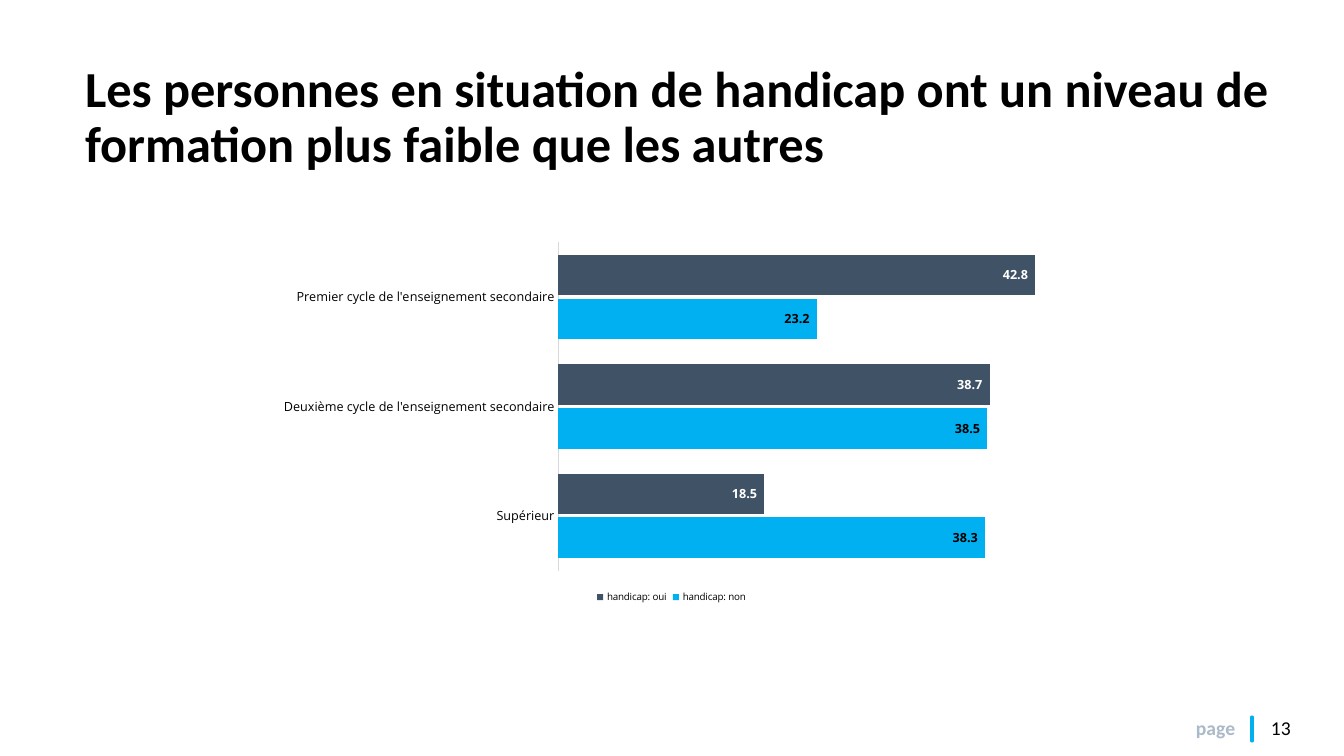
from dataclasses import dataclass

from lxml import etree
from pptx import Presentation
from pptx.chart.data import CategoryChartData
from pptx.dml.color import RGBColor
from pptx.enum.chart import XL_CHART_TYPE, XL_LABEL_POSITION, XL_LEGEND_POSITION, XL_TICK_MARK
from pptx.enum.shapes import MSO_CONNECTOR
from pptx.enum.text import MSO_ANCHOR, MSO_AUTO_SIZE, PP_ALIGN
from pptx.oxml import parse_xml
from pptx.oxml.ns import nsdecls, qn
from pptx.util import Emu, Pt

BARS = XL_CHART_TYPE.BAR_CLUSTERED
IN_END = XL_LABEL_POSITION.INSIDE_END
BOTTOM = XL_LEGEND_POSITION.BOTTOM
NO_TICK = XL_TICK_MARK.NONE
STRAIGHT = MSO_CONNECTOR.STRAIGHT
MIDDLE = MSO_ANCHOR.MIDDLE
TOP = MSO_ANCHOR.TOP
NO_FIT = MSO_AUTO_SIZE.NONE
LEFT = PP_ALIGN.LEFT

SCALE = 914400 / 100.8


@dataclass(frozen=True)
class Theme:
    face: str = "Calibri"
    chart_face: str = "Open Sans"
    black: str = "000000"
    white: str = "FFFFFF"
    blue: str = "00B0F0"
    slate: str = "405265"
    mist: str = "ABBAC9"
    grey: str = "D9D9D9"
    title: int = 36
    foot: int = 14
    label: int = 9
    legend: int = 7


THEME = Theme()
FORMAT = '_-* #,##0.0_-;\\-* #,##0.0_-;_-* "-"??_-;'
LEVELS = [
    "Supérieur",
    "Deuxième cycle de l'enseignement secondaire",
    "Premier cycle de l'enseignement secondaire",
]
SERIES = [
    ("handicap: non", (38.3, 38.5, 23.2), THEME.blue, THEME.black),
    ("handicap: oui", (18.5, 38.7, 42.8), THEME.slate, THEME.white),
]
PLOT = {"x": 0.36, "y": 0.02, "w": 0.62, "h": 0.88}


def px(count):
    return Emu(round(count * SCALE))


def box(*sides):
    return [px(side) for side in sides]


def style(font, size, color, bold=False, face=THEME.face):
    font.name = face
    font.size = Pt(size)
    font.bold = bold
    font.color.rgb = RGBColor.from_string(color)


def set_frame(frame, anchor):
    frame.margin_left = frame.margin_right = 0
    frame.margin_top = frame.margin_bottom = 0
    frame.word_wrap = True
    frame.auto_size = NO_FIT
    frame.vertical_anchor = anchor


def set_title(slide, text, sides):
    title = slide.shapes.title
    title.left, title.top, title.width, title.height = box(*sides)
    set_frame(title.text_frame, MIDDLE)
    title.text_frame.text = text
    line = title.text_frame.paragraphs[0]
    line.alignment = LEFT
    line.line_spacing = 0.9
    style(line.font, THEME.title, THEME.black, True)


def add_page(slide, word, number, sides, stop):
    frame = slide.shapes.add_textbox(*box(*sides)).text_frame
    set_frame(frame, TOP)
    line = frame.paragraphs[0]
    line.font.name = THEME.face
    line.font.size = Pt(THEME.foot)
    tabs = parse_xml(f'<a:tabLst {nsdecls("a")}><a:tab pos="{px(stop)}" algn="l"/></a:tabLst>')
    line.font  
    line._p.get_or_add_pPr().insert(0, tabs)
    for text, color, bold in ((word + "\t", THEME.mist, True), (number, THEME.black, False)):
        run = line.add_run()
        run.text = text
        run.font.bold = bold
        run.font.color.rgb = RGBColor.from_string(color)


def add_rule(slide, ends, color, width):
    rule = slide.shapes.add_connector(STRAIGHT, *box(*ends))
    rule.line.color.rgb = RGBColor.from_string(color)
    rule.line.width = Pt(width)
    rule.line._get_or_add_ln().set("cap", "rnd")
    etree.SubElement(rule._element.spPr, qn("a:effectLst"))


def set_plot(chart, plot):
    area = chart._chartSpace.chart.plotArea
    for old in area.findall(qn("c:layout")):
        area.remove(old)
    modes = '<c:xMode val="edge"/><c:yMode val="edge"/>'
    sizes = "".join(f'<c:{key} val="{part}"/>' for key, part in plot.items())
    area.insert(0, parse_xml(
        f'<c:layout {nsdecls("c")}><c:manualLayout><c:layoutTarget val="inner"/>'
        f"{modes}{sizes}</c:manualLayout></c:layout>"
    ))


def set_axes(chart):
    levels = chart.category_axis
    levels.major_tick_mark = levels.minor_tick_mark = NO_TICK
    levels.has_major_gridlines = False
    levels.format.line.color.rgb = RGBColor.from_string(THEME.grey)
    levels.format.line.width = Pt(0.75)
    style(levels.tick_labels.font, THEME.label, THEME.black, face=THEME.chart_face)
    values = chart.value_axis
    values.minimum_scale = 0
    values.maximum_scale = 45
    values.has_major_gridlines = False
    values.visible = False


def set_bars(bars, fill, ink):
    bars.format.fill.solid()
    bars.format.fill.fore_color.rgb = RGBColor.from_string(fill)
    labels = bars.data_labels
    labels.show_value = True
    labels.position = IN_END
    labels.number_format = FORMAT
    labels.number_format_is_linked = False
    style(labels.font, THEME.label, ink, True, THEME.chart_face)


def add_bars(slide, sides):
    data = CategoryChartData(number_format=FORMAT)
    data.categories = LEVELS
    for name, values, *_ in SERIES:
        data.add_series(name, values)
    chart = slide.shapes.add_chart(BARS, *box(*sides), data).chart
    chart.has_title = False
    style(chart.font, THEME.legend, THEME.black, face=THEME.chart_face)
    chart.has_legend = True
    chart.legend.position = BOTTOM
    chart.legend.include_in_layout = False
    style(chart.legend.font, THEME.legend, THEME.black, face=THEME.chart_face)
    plot = chart.plots[0]
    plot.gap_width = 62
    plot.overlap = -8
    plot.vary_by_categories = False
    for bars, (_, _, fill, ink) in zip(plot.series, SERIES):
        set_bars(bars, fill, ink)
    set_axes(chart)
    set_plot(chart, PLOT)


def main():
    deck = Presentation()
    deck.slide_width, deck.slide_height = box(1344, 756)
    slide = deck.slides.add_slide(deck.slide_layouts[5])
    add_page(slide, "page", "13", (1196, 716, 148, 24), 75)
    add_rule(slide, (1252, 717, 1252, 741), THEME.blue, 2.25)
    set_title(
        slide,
        "Les personnes en situation de handicap ont un niveau de formation plus faible que les autres",
        (85, 40, 1203, 157),
    )
    add_bars(slide, (267, 235, 809, 373))
    deck.save("out.pptx")


if __name__ == "__main__":
    main()
